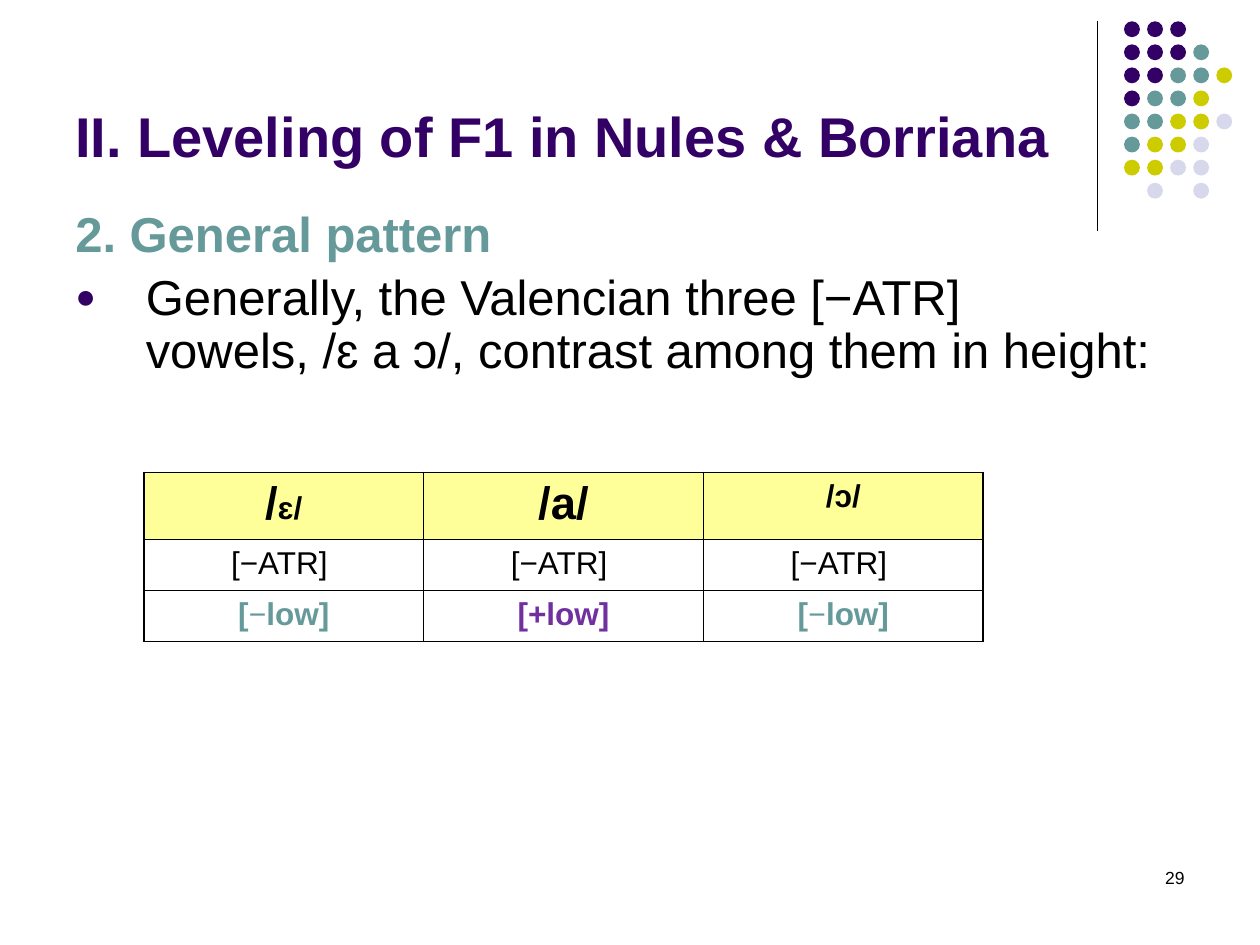
from lxml import etree
from pptx import Presentation
from pptx import util as u
from pptx.dml import color
from pptx.enum import shapes, text
from pptx.oxml import ns

PURPLE, TEAL, OLIVE, LILAC = "330066", "669999", "CCCC00", "D8D8EC"
BLACK, YELLOW, VIOLET = "000000", "FFFF99", "7030A0"


def rgb(value):
    return color.RGBColor.from_string(value)


def child(parent, tag, **attributes):
    return etree.SubElement(parent, ns.qn(tag), attributes)


class SlideBuilder:
    """Holds the text style and the current page."""

    font = "Arial"

    def __init__(self, page):
        self.page = page

    def line(self, x1, y1, x2, y2, width=0.75):
        rule = self.page.shapes.add_connector(
            shapes.MSO_CONNECTOR.STRAIGHT, u.Cm(x1), u.Cm(y1), u.Cm(x2), u.Cm(y2))
        rule.line.color.rgb = rgb(BLACK)
        rule.line.width = u.Pt(width)
        child(rule._element.spPr, "a:effectLst")

    def dot(self, left, top, size, fill):
        oval = self.page.shapes.add_shape(
            shapes.MSO_SHAPE.OVAL, u.Cm(left), u.Cm(top), u.Cm(size), u.Cm(size))
        oval.shadow.inherit = False
        oval.fill.solid()
        oval.fill.fore_color.rgb = rgb(fill)
        oval.line.fill.background()

    def box(self, left, top, width, height, anchor=text.MSO_ANCHOR.TOP):
        frame = self.page.shapes.add_textbox(
            u.Cm(left), u.Cm(top), u.Cm(width), u.Cm(height)).text_frame
        frame.word_wrap = True
        frame.vertical_anchor = anchor
        return frame

    def span(self, para, words, size, fill=BLACK, bold=False, font=None):
        run = para.add_run()
        run.text = words
        run.font.name = font or self.font
        run.font.size = u.Pt(size)
        run.font.bold = bold
        run.font.color.rgb = rgb(fill)

    def spacing(self, para):
        para.line_spacing = 0.9
        para.space_before = u.Pt(5.6)

    def bullet(self, para, sign, fill, percent, indent):
        props = para._p.get_or_add_pPr()
        props.set("marL", str(u.Cm(indent)))
        props.set("indent", str(-u.Cm(indent)))
        child(child(props, "a:buClr"), "a:srgbClr", val=fill)
        child(props, "a:buSzPct", val=str(percent * 1000))
        child(props, "a:buFont", typeface=self.font)
        child(props, "a:buChar", char=sign)

    def table(self, left, top, widths, heights, rows, header_fill):
        grid = self.page.shapes.add_table(
            len(heights), len(widths), u.Cm(left), u.Cm(top),
            u.Cm(sum(widths)), u.Cm(sum(heights))).table
        grid.first_row = grid.horz_banding = False
        for column, width in zip(grid.columns, widths):
            column.width = u.Cm(width)
        for r, spans_by_cell in enumerate(rows):
            grid.rows[r].height = u.Cm(heights[r])
            for c, spans in enumerate(spans_by_cell):
                self.cell(grid.cell(r, c), spans, None if r else header_fill)

    def cell(self, cell, spans, fill):
        props = cell._tc.get_or_add_tcPr()
        for side in ("a:lnL", "a:lnR", "a:lnT", "a:lnB"):
            edge = child(props, side, w=str(u.Pt(1)))
            child(child(edge, "a:solidFill"), "a:srgbClr", val=BLACK)
        if fill:
            cell.fill.solid()
            cell.fill.fore_color.rgb = rgb(fill)
        else:
            cell.fill.background()
        para = cell.text_frame.paragraphs[0]
        para.alignment = text.PP_ALIGN.CENTER
        for style in spans:
            self.span(para, **style)


def head(words, size):
    return dict(words=words, size=size, bold=True)


def low(words, fill=TEAL, font=None):
    return dict(words=words, size=18, fill=fill, bold=True, font=font)


def main():
    deck = Presentation()
    deck.slide_width, deck.slide_height = u.Cm(25.4), u.Cm(19.05)
    builder = SlideBuilder(deck.slides.add_slide(deck.slide_layouts[6]))

    # Corner decoration: rule and dot pattern
    builder.line(22.12, 0.43, 22.12, 4.65)
    dot_colours = {"P": PURPLE, "T": TEAL, "O": OLIVE, "L": LILAC}
    pattern = ["PPP", "PPPT", "PPTTO", "PTTO", "TTOOL", "TOOL", "OOLL", " L L"]
    pitch = 0.465
    for r, marks in enumerate(pattern):
        for c, mark in enumerate(marks):
            if mark in dot_colours:
                builder.dot(22.66 + c * pitch, 0.43 + r * pitch, 0.32, dot_colours[mark])

    # Page number
    para = builder.box(18.21, 17.35, 5.92, 1.27).paragraphs[0]
    para.alignment = text.PP_ALIGN.RIGHT
    builder.span(para, "29", 10)

    # Title
    title = builder.box(1.27, 1.12, 20.96, 2.41, text.MSO_ANCHOR.BOTTOM)
    builder.span(title.paragraphs[0], "II. Leveling of F1 in Nules & Borriana",
                 32, PURPLE, bold=True)

    # Body text
    body = builder.box(1.27, 4.11, 22.86, 13.79)
    para = body.paragraphs[0]
    builder.spacing(para)
    builder.span(para, "2. General pattern", 28, TEAL, bold=True)
    para = body.add_paragraph()
    builder.spacing(para)
    builder.bullet(para, "●", PURPLE, 70, 1.42)
    builder.span(para, "Generally, the Valencian three [−ATR] vowels, /ɛ a ɔ/, "
                       "contrast among them in height:", 28)

    # Vowel feature table
    atr = [dict(words="[−ATR] ", size=18)]
    minus_low = [low("["), low("−", font="Times New Roman"), low("low]")]
    rows = [
        [[head("/", 26), head("ɛ/", 18)], [head("/a/", 26)], [head("/ɔ/", 18)]],
        [atr] * 3,
        [minus_low, [low("[+low]", VIOLET)], minus_low],
    ]
    builder.table(2.9, 9.52, [5.64] * 3, [1.29, 1.03, 1.03], rows, YELLOW)

    deck.save("out.pptx")


if __name__ == "__main__":
    main()
